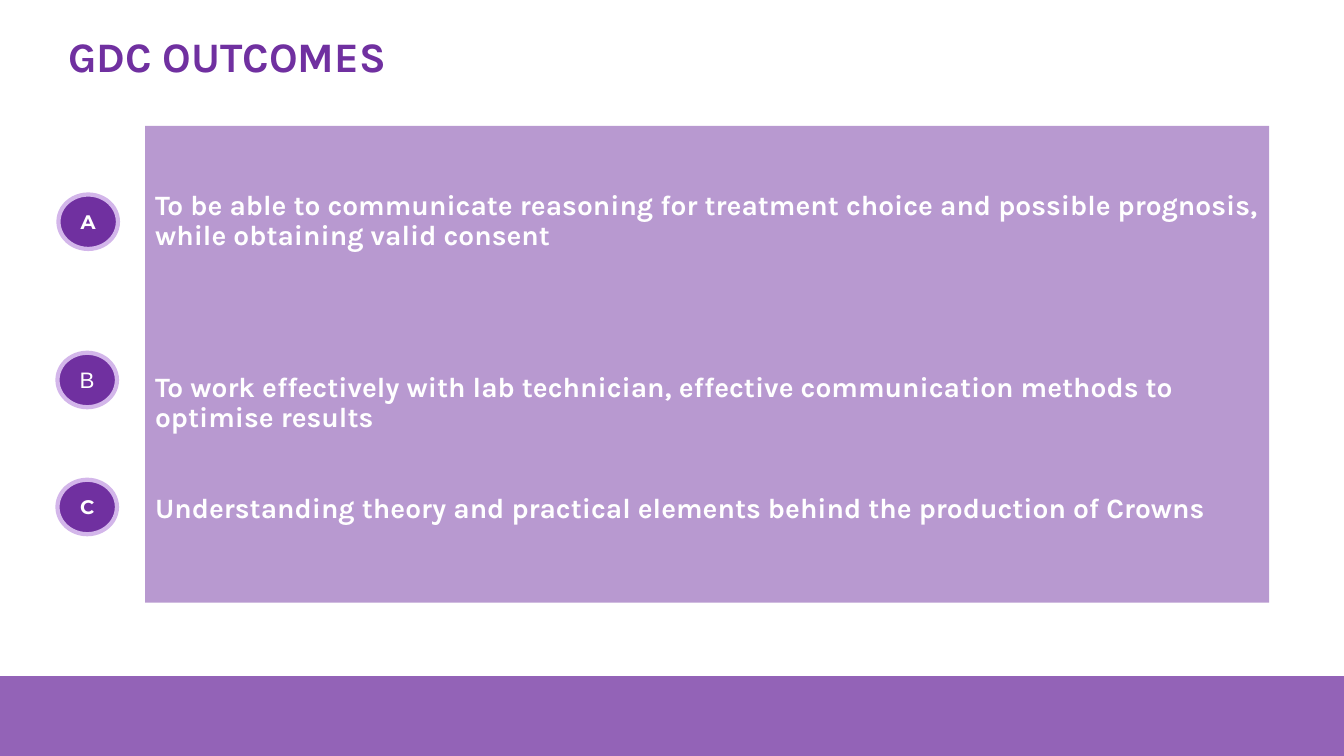
from lxml import etree
from pptx import Presentation
from pptx.dml.color import RGBColor
from pptx.enum.shapes import MSO_SHAPE
from pptx.enum.text import MSO_ANCHOR, PP_ALIGN
from pptx.oxml.ns import qn
from pptx.util import Pt

RECT, OVAL = MSO_SHAPE.RECTANGLE, MSO_SHAPE.OVAL
TOP, MIDDLE = MSO_ANCHOR.TOP, MSO_ANCHOR.MIDDLE
LEFT, CENTER = PP_ALIGN.LEFT, PP_ALIGN.CENTER
PURPLE = RGBColor(0x70, 0x30, 0xA0)
LILAC = RGBColor(0xD3, 0xB6, 0xEA)
WHITE = RGBColor(0xFF, 0xFF, 0xFF)

WIDTH, HEIGHT = 960, 540
GAP = 21.6  # height of one text line in the panel

# Wording and space above each outcome
GOALS = [
    ("To be able to communicate reasoning for treatment choice and "
     "possible prognosis, while obtaining valid consent", 0),
    ("To work effectively with lab technician, effective communication "
     "methods to optimise results", 4 * GAP),
    ("Understanding theory and practical elements behind the production "
     "of Crowns", 2 * GAP),
]

# Letter, left, top, font, size, bold
BADGES = [
    ("A", 41.76, 138.96, "Montserrat", 14, True),
    ("B", 41.04, 252, "Arial", 16, False),
    ("C", 41.04, 342.72, "Montserrat", 14, True),
]


def style(para, font, size, color, bold=True, align=LEFT):
    para.alignment = align
    for run in para.runs:
        run.font.name = font
        run.font.size = Pt(size)
        run.font.bold = bold
        run.font.color.rgb = color


def add_box(slide, kind, left, top, width, height, alpha=100):
    box = slide.shapes.add_shape(kind, Pt(left), Pt(top), Pt(width), Pt(height))
    box.shadow.inherit = False
    box.fill.solid()
    box.fill.fore_color.rgb = PURPLE
    box.line.fill.background()
    if alpha < 100:
        color = box.fill._xPr.find(qn("a:solidFill"))[0]
        etree.SubElement(color, qn("a:alpha")).set("val", str(alpha * 1000))
    return box


def add_title(slide, text):
    box = slide.shapes.add_textbox(Pt(41.76), Pt(12.24), Pt(666.72), Pt(59.04))
    frame = box.text_frame
    frame.word_wrap = True
    frame.vertical_anchor = MIDDLE
    frame.text = text
    para = frame.paragraphs[0]
    para.line_spacing = 0.9
    style(para, "Karla", 30, PURPLE)


def add_panel(slide):
    frame = add_box(slide, RECT, 103.68, 90, 802.8, 340.56, 49).text_frame
    frame.word_wrap = True
    frame.vertical_anchor = TOP
    frame.margin_top = Pt(3.6 + 2 * GAP)
    frame.text = "\n".join(text for text, _ in GOALS)
    for para, (_, space) in zip(frame.paragraphs, GOALS):
        para.line_spacing = 0.9
        para.space_before = Pt(space)
        style(para, "Karla", 20, WHITE)


def add_badge(slide, letter, left, top, font, size, bold):
    badge = add_box(slide, OVAL, left, top, 42.48, 38.88)
    badge.line.color.rgb = LILAC
    badge.line.width = Pt(3)
    frame = badge.text_frame
    frame.vertical_anchor = MIDDLE
    frame.text = letter
    style(frame.paragraphs[0], font, size, WHITE, bold, CENTER)


def main():
    deck = Presentation()
    deck.slide_width, deck.slide_height = Pt(WIDTH), Pt(HEIGHT)
    slide = deck.slides.add_slide(deck.slide_layouts[6])

    # Footer band
    add_box(slide, RECT, 0, 483, WIDTH, HEIGHT - 483, 75)

    # Heading and outcomes
    add_title(slide, "GDC OUTCOMES")
    add_panel(slide)

    # Lettered badges
    for badge in BADGES:
        add_badge(slide, *badge)

    deck.save("out.pptx")


if __name__ == "__main__":
    main()
